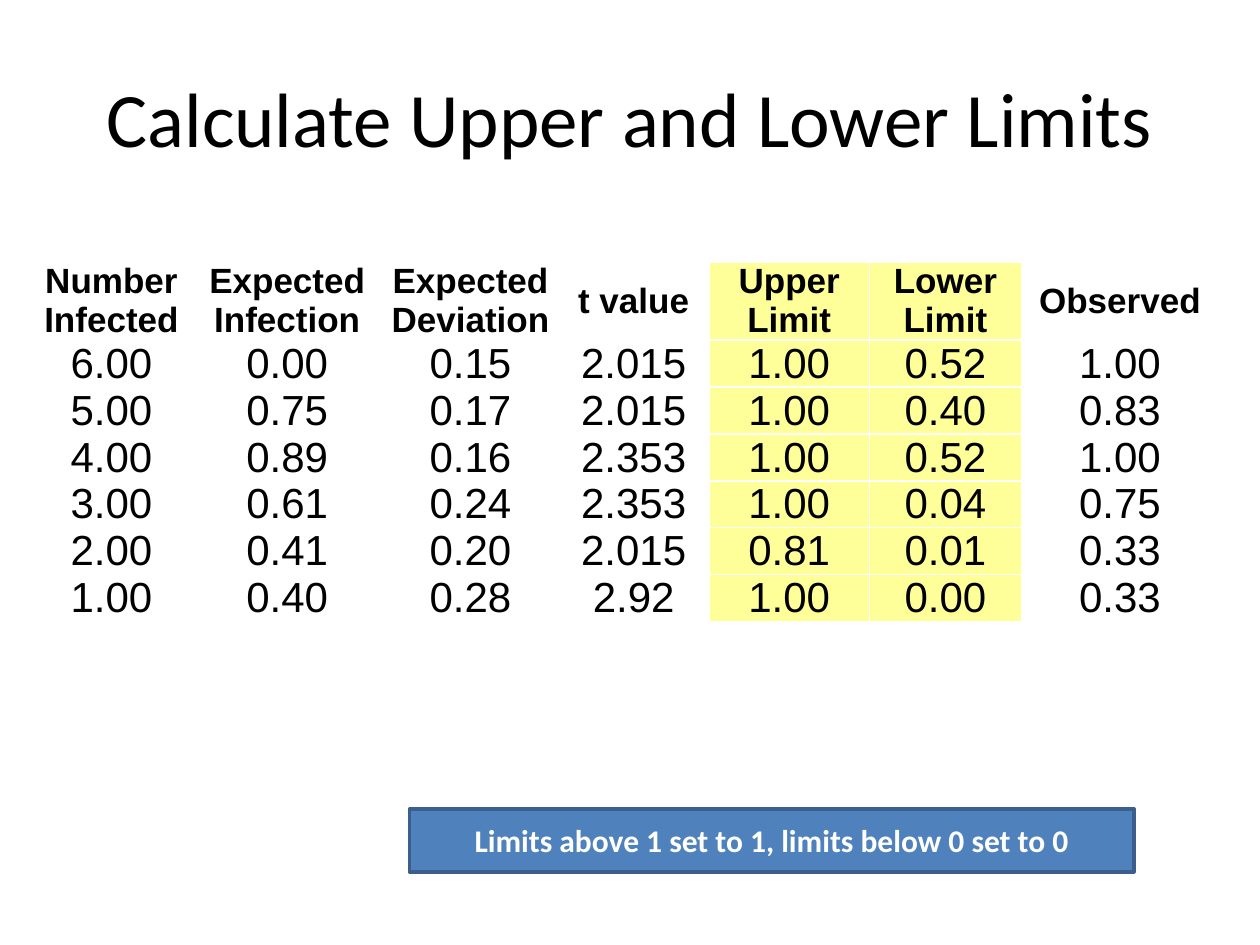
from dataclasses import dataclass

import pptx
import pptx.dml.color
import pptx.enum.shapes
import pptx.enum.text
import pptx.util

Inches = pptx.util.Inches
Pt = pptx.util.Pt
MIDDLE = pptx.enum.text.MSO_ANCHOR.MIDDLE
CENTER = pptx.enum.text.PP_ALIGN.CENTER

HEADER_HEIGHT, ROW_HEIGHT = 0.62, 0.37


@dataclass
class Column:
    heading: str
    width: float
    values: list[str]
    fill: str | None = None


COLUMNS = [
    Column("Number Infected", 1.27, ["6.00", "5.00", "4.00", "3.00", "2.00", "1.00"]),
    Column("Expected Infection", 1.52, ["0.00", "0.75", "0.89", "0.61", "0.41", "0.40"]),
    Column("Expected Deviation", 1.39, ["0.15", "0.17", "0.16", "0.24", "0.20", "0.28"]),
    Column("t value", 1.2, ["2.015", "2.015", "2.353", "2.353", "2.015", "2.92"]),
    Column("Upper Limit", 1.27, ["1.00", "1.00", "1.00", "1.00", "0.81", "1.00"], "FFFF99"),
    Column("Lower Limit", 1.21, ["0.52", "0.40", "0.52", "0.04", "0.01", "0.00"], "FFFF99"),
    Column("Observed", 1.56, ["1.00", "0.83", "1.00", "0.75", "0.33", "0.33"]),
]


def rgb(value: str) -> pptx.dml.color.RGBColor:
    return pptx.dml.color.RGBColor.from_string(value)


def set_text(tf, text: str, size: float, font: str, color: str = "000000",
             bold: bool = False) -> None:
    tf.text = text
    tf.word_wrap = True
    p = tf.paragraphs[0]
    p.alignment = CENTER
    r = p.runs[0]
    r.font.size = Pt(size)
    r.font.name = font
    r.font.bold = bold
    r.font.color.rgb = rgb(color)


def format_cell(cell, text: str, fill: str | None, is_header: bool) -> None:
    set_text(cell.text_frame, text, 20 if is_header else 24, "Arial", bold=is_header)
    cell.vertical_anchor = MIDDLE
    cell.margin_left = cell.margin_right = cell.margin_top = cell.margin_bottom = 0
    if fill:
        cell.fill.solid()
        cell.fill.fore_color.rgb = rgb(fill)
    else:
        cell.fill.background()


def add_title(slide, text: str) -> None:
    title = slide.shapes.title
    title.left, title.top = Inches(0.5), Inches(0.3)
    title.width, title.height = Inches(9), Inches(1.25)
    set_text(title.text_frame, text, 44, "Calibri")
    title.text_frame.vertical_anchor = MIDDLE


def add_limits_table(slide, columns: list[Column]) -> None:
    row_count = len(columns[0].values) + 1
    width = sum(column.width for column in columns)
    height = HEADER_HEIGHT + (row_count - 1) * ROW_HEIGHT
    table = slide.shapes.add_table(row_count, len(columns), Inches(0.25), Inches(2.08),
                                   Inches(width), Inches(height)).table
    table.first_row = table.horz_banding = False
    for i, row in enumerate(table.rows):
        row.height = Inches(ROW_HEIGHT if i else HEADER_HEIGHT)
    for j, column in enumerate(columns):
        table.columns[j].width = Inches(column.width)
        for i, text in enumerate([column.heading, *column.values]):
            format_cell(table.cell(i, j), text, column.fill, i == 0)


def add_note_box(slide, text: str) -> None:
    sp = slide.shapes.add_shape(pptx.enum.shapes.MSO_SHAPE.RECTANGLE, Inches(3.25),
                                Inches(6.42), Inches(5.75), Inches(0.5))
    sp.shadow.inherit = False
    sp.fill.solid()
    sp.fill.fore_color.rgb = rgb("4F81BD")
    sp.line.color.rgb = rgb("3A5F8C")
    sp.line.width = Pt(2)
    set_text(sp.text_frame, text, 18, "Calibri", "FFFFFF", bold=True)
    sp.text_frame.vertical_anchor = MIDDLE


def main() -> None:
    prs = pptx.Presentation()
    prs.slide_width, prs.slide_height = Inches(10), Inches(7.5)
    slide = prs.slides.add_slide(prs.slide_layouts.get_by_name("Title Only"))
    add_title(slide, "Calculate Upper and Lower Limits")
    add_limits_table(slide, COLUMNS)
    add_note_box(slide, "Limits above 1 set to 1, limits below 0 set to 0")
    prs.save("out.pptx")


if __name__ == "__main__":
    main()
